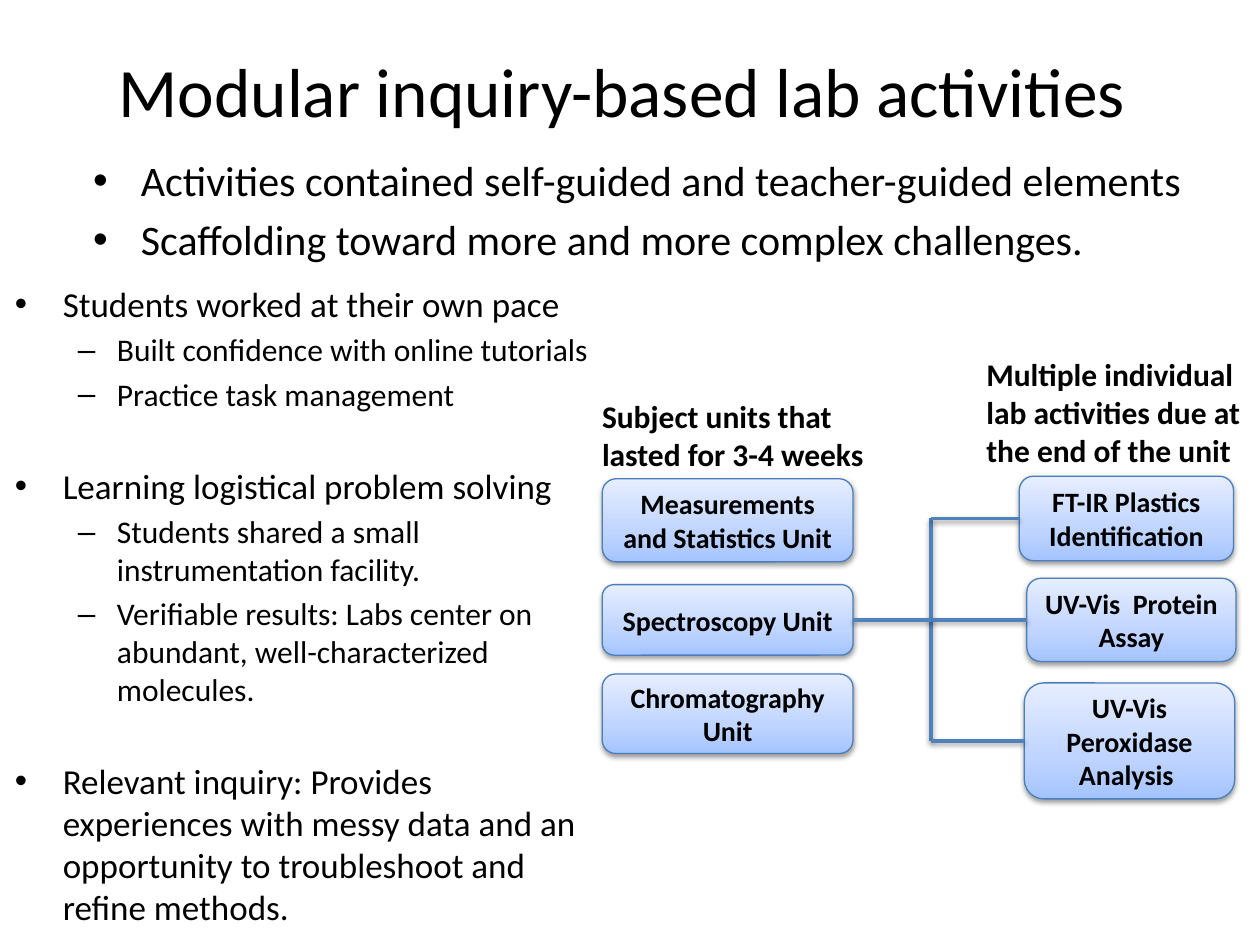
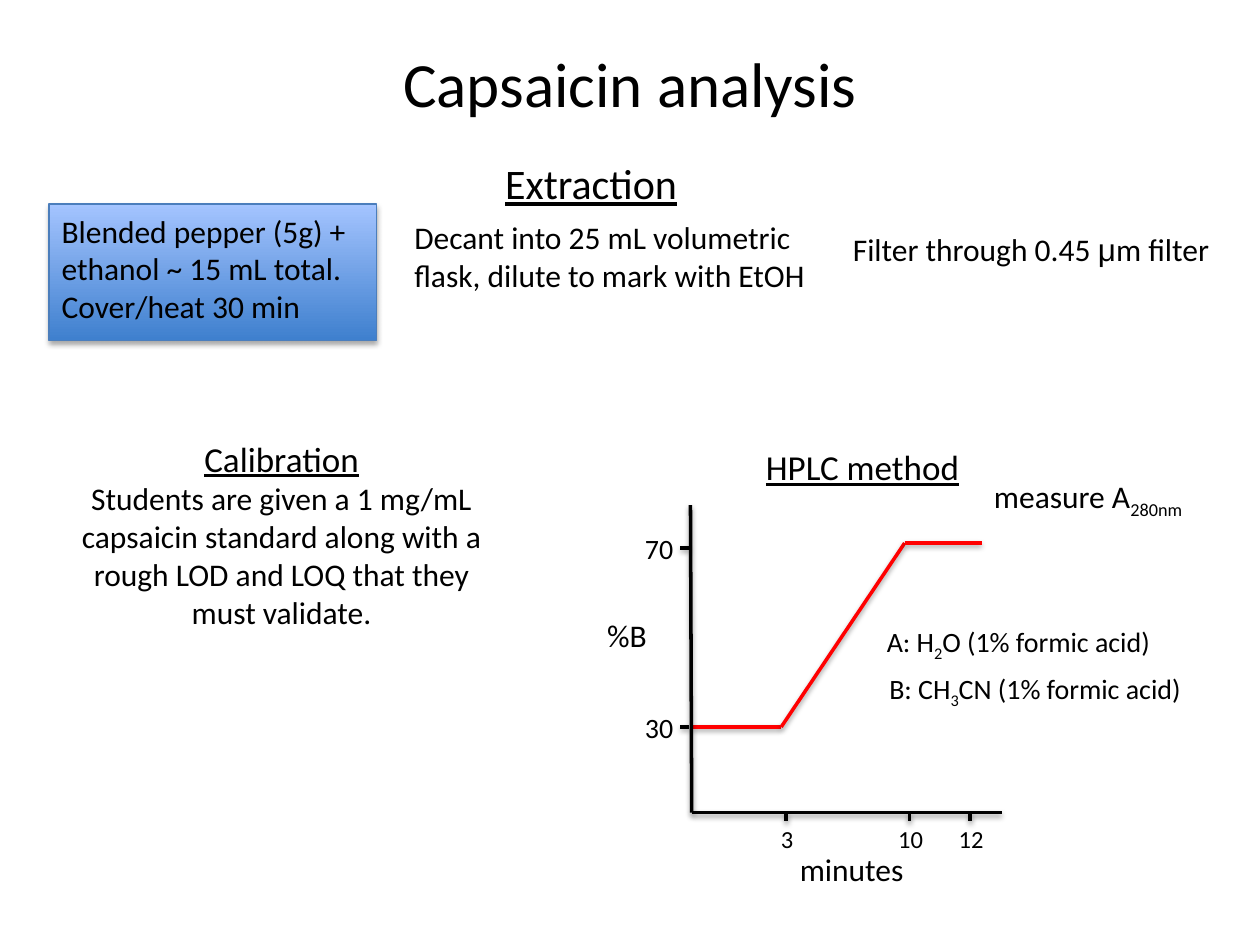
from itertools import pairwise

from lxml import etree
from pptx import Presentation
from pptx.dml.color import RGBColor
from pptx.enum import shapes, text
from pptx.oxml.ns import qn
from pptx.util import Inches, Pt

BLACK = RGBColor(0x00, 0x00, 0x00)
RED = RGBColor(0xFF, 0x00, 0x00)
BRANCH_BLUE = RGBColor(0x4F, 0x81, 0xBD)
EDGE_BLUE = RGBColor(0x4B, 0x7E, 0xBC)
PALE, SOFT, LIGHT, DEEP = (RGBColor.from_string(c) for c in ("E6EEFF", "BFD4FF", "A4C4FF", "3F80CE"))
UNIT_GRADIENT = [(0, LIGHT), (35, SOFT), (100, PALE)]
SAMPLE_GRADIENT = [(0, DEEP), (100, LIGHT)]
FONT = "Calibri"
CENTER = text.PP_ALIGN.CENTER
SUB = {"baseline": "-25000"}

# Slide 1: bullets are (level, text, opens a new block)
HIGHLIGHTS = [
    (0, "Activities contained self-guided and teacher-guided elements", False),
    (0, "Scaffolding toward more and more complex challenges.", False),
]
BENEFITS = [
    (0, "Students worked at their own pace", False),
    (1, "Built confidence with online tutorials", False),
    (1, "Practice task management", False),
    (0, "Learning logistical problem solving", True),
    (1, "Students shared a small instrumentation facility.", False),
    (1, "Verifiable results: Labs center on abundant, well-characterized molecules.", False),
    (0, "Relevant inquiry: Provides experiences with messy data and an opportunity "
        "to troubleshoot and refine methods.", True),
]
LEVELS = [("•", 0.38, -0.38), ("–", 0.81, -0.31)]
BLOCK_GAP = 25.6
UNITS = [
    ("Measurements and Statistics Unit", (4.78, 3.8, 1.99, 0.66)),
    ("Spectroscopy Unit", (4.78, 4.64, 1.99, 0.56)),
    ("Chromatography Unit", (4.78, 5.35, 1.99, 0.63)),
]
ACTIVITIES = [
    ("FT-IR Plastics Identification", (8.09, 3.78, 1.7, 0.67)),
    ("UV-Vis  Protein Assay", (8.15, 4.59, 1.66, 0.66)),
    ("UV-Vis Peroxidase Analysis ", (8.13, 5.42, 1.67, 0.92)),
]
EXPANDED_UNIT = 1
TRUNK_X = 7.39
CAPTIONS = [
    ("Subject units that lasted for 3-4 weeks", (4.68, 3.1, 2.3, 0.71)),
    ("Multiple individual lab activities due at the end of the unit", (7.73, 2.77, 2.26, 1.01)),
]

# Slide 2: wrapped steps, then one-line labels as (size, runs, place, underline)
SAMPLE_BOX = (0.39, 1.62, 2.6, 1.08)
STEPS = [
    ("Blended pepper (5g) + ethanol ~ 15 mL total. Cover/heat 30 min", (0.39, 1.63, 2.52, 1.01)),
    ("Decant into 25 mL volumetric flask, dilute to mark with EtOH", (3.19, 1.68, 3.33, 0.71)),
]
CALIBRATION = ("Calibration", "Students are given a 1 mg/mL capsaicin standard along with a "
               "rough LOD and LOQ that they must validate.")
LABELS = [
    (18, [("Filter through 0.45 ", {}), ("μ", {"font": "Arial"}), ("m filter", {})],
     (6.67, 1.78, 3.12, 0.4), False),
    (24, [("Extraction", {})], (3.91, 1.2, 1.58, 0.5), True),
    (20, [("HPLC method", {})], (5.98, 3.49, 1.75, 0.44), True),
    (18, [("measure A", {}), ("280nm", SUB)], (7.79, 3.74, 1.78, 0.4), False),
    (16, [("A: H", {}), ("2", SUB), ("O (1% formic acid)", {})], (6.94, 4.91, 2.33, 0.37), False),
    (16, [("B: CH", {}), ("3", SUB), ("CN (1% formic acid)", {})], (6.96, 5.28, 2.56, 0.37), False),
    (18, [("minutes", {})], (6.25, 6.7, 1.03, 0.4), False),
    (18, [("%B", {})], (4.72, 4.84, 0.52, 0.4), False),
]
ORIGIN = (5.49, 6.45)
AXIS_TOP, AXIS_RIGHT = (5.48, 4.01), (7.95, 6.45)
PERCENT_TICKS = [("70", 4.35), ("30", 5.77)]
MINUTE_TICKS = [("3", 6.24, 0.3), ("10", 7.22, 0.4), ("12", 7.7, 0.4)]
GRADIENT_RUN = [(5.5, 5.77), (6.2, 5.77), (7.18, 4.31), (7.79, 4.31)]


def inches(place):
    return [Inches(v) for v in place]


def add_run(paragraph, words, size, font=FONT, baseline=None, **formats):
    run = paragraph.add_run()
    run.text = words
    for name, value in {"name": font, "size": Pt(size), **formats}.items():
        setattr(run.font, name, value)
    run.font.color.rgb = BLACK
    if baseline:
        run.font._element.set("baseline", baseline)


def add_box(slide, place, wrap=True, grow=True):
    frame = slide.shapes.add_textbox(*inches(place)).text_frame
    frame.word_wrap = wrap
    sizing = text.MSO_AUTO_SIZE
    frame.auto_size = sizing.SHAPE_TO_FIT_TEXT if grow else sizing.NONE
    return frame


def add_label(slide, words, place, size, wrap=False, **formats):
    add_run(add_box(slide, place, wrap).paragraphs[0], words, size, **formats)


def add_bullets(slide, items, place, sizes, grow):
    frame = add_box(slide, place, grow=grow)
    for i, (level, words, new_block) in enumerate(items):
        paragraph = frame.add_paragraph() if i else frame.paragraphs[0]
        mark, margin, indent = LEVELS[level]
        size = sizes[level]
        paragraph.level = level
        paragraph.space_before = Pt(size * 0.2 + BLOCK_GAP * new_block)
        props = paragraph._p.get_or_add_pPr()
        props.set("marL", str(Inches(margin)))
        props.set("indent", str(Inches(indent)))
        etree.SubElement(props, qn("a:buFont")).set("typeface", "Arial")
        etree.SubElement(props, qn("a:buChar")).set("char", mark)
        add_run(paragraph, words, size)


def add_color(parent, color, alpha=None):
    node = etree.SubElement(parent, qn("a:srgbClr"), val=str(color))
    if alpha:
        etree.SubElement(node, qn("a:alpha"), val=str(alpha * 1000))


def cast_shadow(part, alpha=38, distance=1.6):
    """Drop a soft shadow straight down; call after fill and line are set."""
    effects = etree.SubElement(part._element.spPr, qn("a:effectLst"))
    shadow = etree.SubElement(effects, qn("a:outerShdw"), blurRad=str(Pt(3.1)),
                              dist=str(Pt(distance)), dir="5400000", rotWithShape="0")
    add_color(shadow, BLACK, alpha)


def add_panel(slide, kind, place, stops, **shadow):
    """Add a shape whose gradient runs from bottom to top."""
    panel = slide.shapes.add_shape(kind, *inches(place))
    panel.fill.gradient()
    panel.fill.gradient_angle = 90
    stop_list = panel._element.spPr.find(".//" + qn("a:gsLst"))
    for old in list(stop_list):
        stop_list.remove(old)
    for position, color in stops:
        add_color(etree.SubElement(stop_list, qn("a:gs"), pos=str(position * 1000)), color)
    panel.line.color.rgb = EDGE_BLUE
    panel.line.width = Pt(0.75)
    cast_shadow(panel, **shadow)
    return panel


def add_unit(slide, words, place):
    unit = add_panel(slide, shapes.MSO_SHAPE.ROUNDED_RECTANGLE, place, UNIT_GRADIENT)
    frame = unit.text_frame
    frame.word_wrap = True
    frame.vertical_anchor = text.MSO_ANCHOR.MIDDLE
    frame.paragraphs[0].alignment = CENTER
    add_run(frame.paragraphs[0], words, 16, bold=True)
    return unit


def add_line(slide, start, end, color):
    line = slide.shapes.add_connector(shapes.MSO_CONNECTOR.STRAIGHT, *inches(start + end))
    line.line.color.rgb = color
    line.line.width = Pt(2)
    cast_shadow(line)
    return line


def add_titled_slide(deck, words, place, size):
    slide = deck.slides.add_slide(deck.slide_layouts[5])
    title = slide.shapes.title
    title.left, title.top, title.width, title.height = inches(place)
    frame = title.text_frame
    frame.auto_size = text.MSO_AUTO_SIZE.NONE
    frame.vertical_anchor = text.MSO_ANCHOR.MIDDLE
    frame.paragraphs[0].alignment = CENTER
    add_run(frame.paragraphs[0], words, size)
    return slide


def build_activities(deck):
    slide = add_titled_slide(deck, "Modular inquiry-based lab activities ", (0.5, 0.19, 9, 1.04), 39.6)
    add_bullets(slide, BENEFITS, (0.02, 2.19, 4.8, 5.31), (20, 18), grow=False)
    units = [add_unit(slide, *unit) for unit in UNITS]
    activities = [add_unit(slide, *activity) for activity in ACTIVITIES]

    middles = [top + height / 2 for _, (_, top, _, height) in ACTIVITIES]
    add_line(slide, (TRUNK_X, middles[0]), (TRUNK_X, middles[-1]), BRANCH_BLUE)
    for activity, y in zip(activities, middles):
        branch = add_line(slide, (TRUNK_X, y), (TRUNK_X + 0.7, y), BRANCH_BLUE)
        branch.end_connect(activity, 1)
    stem_y = middles[EXPANDED_UNIT]
    stem = add_line(slide, (TRUNK_X - 0.6, stem_y), (TRUNK_X, stem_y), BRANCH_BLUE)
    stem.begin_connect(units[EXPANDED_UNIT], 3)

    for words, place in CAPTIONS:
        add_label(slide, words, place, 18, wrap=True, bold=True)
    add_bullets(slide, HIGHLIGHTS, (0.64, 1.18, 8.94, 0.99), (24,), grow=True)


def build_hplc_plot(slide):
    for start, end in pairwise(GRADIENT_RUN):
        add_line(slide, start, end, RED)
    for end in (AXIS_TOP, AXIS_RIGHT):
        add_line(slide, end, ORIGIN, BLACK)
    for percent, y in PERCENT_TICKS:
        add_line(slide, (5.4, y), (5.47, y), BLACK)
        add_label(slide, percent, (5.02, y - 0.18, 0.43, 0.37), 16)
    for minute, x, width in MINUTE_TICKS:
        add_line(slide, (x, 6.45), (x, 6.52), BLACK)
        add_label(slide, minute, (x + 0.01 - width / 2, 6.49, width, 0.34), 14)


def build_capsaicin(deck):
    slide = add_titled_slide(deck, "Capsaicin analysis", (0.5, 0.28, 9, 0.75), 36)
    add_panel(slide, shapes.MSO_SHAPE.RECTANGLE, SAMPLE_BOX, SAMPLE_GRADIENT, alpha=35, distance=1.8)
    for words, place in STEPS:
        add_label(slide, words, place, 18, wrap=True)

    calibration = add_box(slide, (0.5, 3.42, 3.47, 1.65))
    heading, task = calibration.paragraphs[0], calibration.add_paragraph()
    heading.alignment = task.alignment = CENTER
    add_run(heading, CALIBRATION[0], 20, underline=True)
    add_run(task, CALIBRATION[1], 18)

    build_hplc_plot(slide)
    for size, runs, place, underline in LABELS:
        paragraph = add_box(slide, place, wrap=False).paragraphs[0]
        for words, formats in runs:
            add_run(paragraph, words, size, underline=underline, **formats)


def main():
    deck = Presentation()
    deck.slide_width, deck.slide_height = Inches(10), Inches(7.5)
    build_activities(deck)
    build_capsaicin(deck)
    deck.save("out.pptx")


if __name__ == "__main__":
    main()
